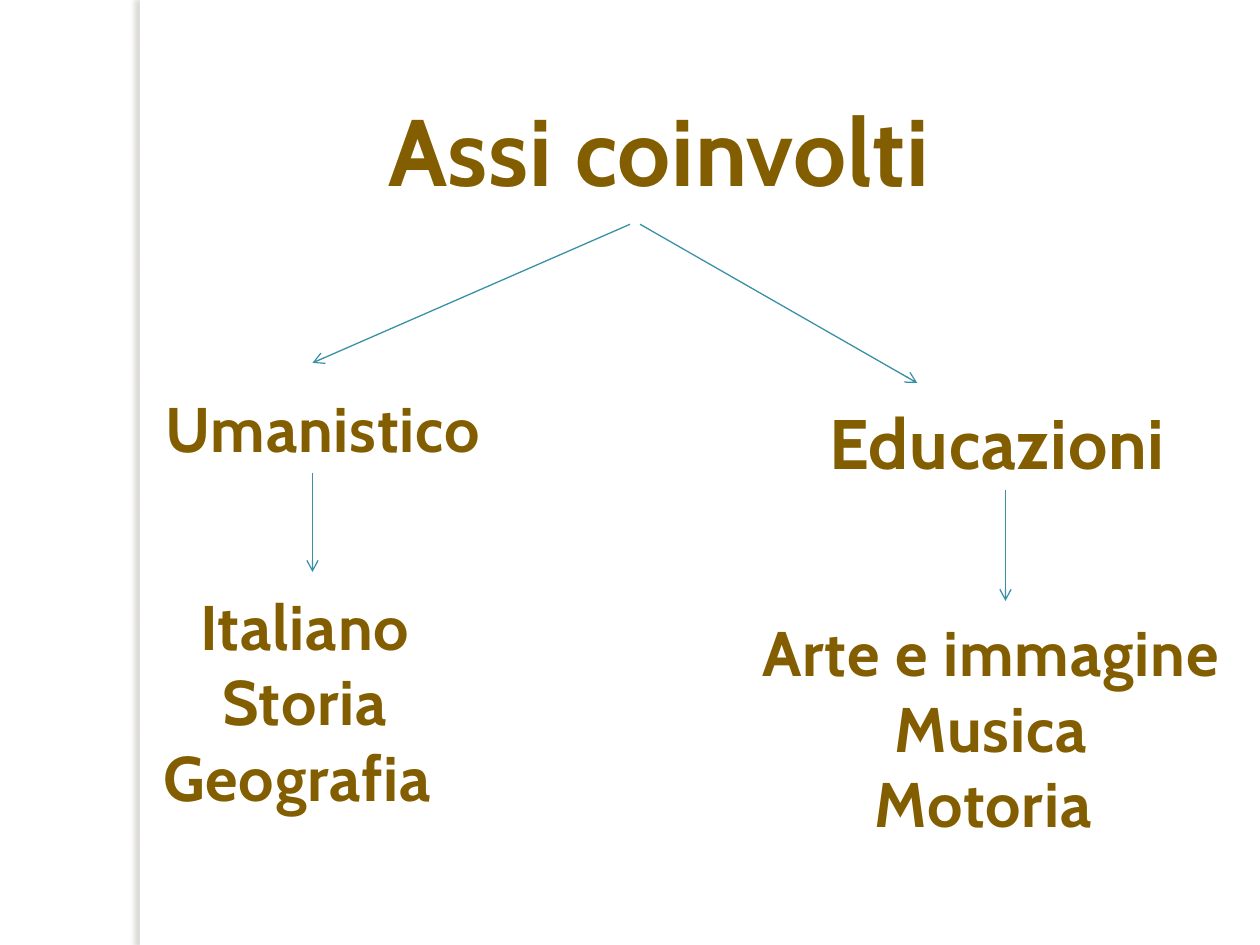
"""Build the slide showing the subject areas involved and their subjects."""
from lxml import etree
from pptx import Presentation
from pptx import util as u
from pptx.dml.color import RGBColor
from pptx.enum import shapes, text
from pptx.oxml.ns import qn

COLOURS = {"text": "835E01", "arrow": "3891A7", "strip": "FFFFFF", "shadow": "736F63"}
FONT = "Cabin"
TITLE = ("Assi coinvolti", 54, (2.76, 0.68, 4.94, 1.01))
LABELS = [
    ("Umanistico ", 36, (1.06, 3.04, 3.13, 0.71)),
    ("Educazioni ", 40, (6.34, 3.12, 3.28, 0.77)),
    ("Italiano\nStoria\nGeografia ", 36, (1.06, 4.61, 2.72, 1.92)),
    ("Arte e immagine\nMusica\nMotoria ", 36, (5.7, 4.82, 4.33, 1.92)),
]
ARROWS = [
    (5, 1.78, 2.48, 2.88),
    (5.08, 1.78, 7.28, 3.04),
    (2.48, 3.75, 2.48, 4.54),
    (7.98, 3.89, 7.98, 4.77),
]


def inches(values):
    return [u.Inches(value) for value in values]


def colour(name):
    return RGBColor.from_string(COLOURS[name])


def write(box, words, size):
    frame = box.text_frame
    frame.text = words
    frame.word_wrap = False
    frame.auto_size = text.MSO_AUTO_SIZE.SHAPE_TO_FIT_TEXT
    frame.vertical_anchor = text.MSO_ANCHOR.TOP
    for para in frame.paragraphs:
        para.alignment = text.PP_ALIGN.CENTER
        para.font.name = FONT
        para.font.size = u.Pt(size)
        para.font.bold = True
        para.font.color.rgb = colour("text")
        for span in para.runs:
            span._r.get_or_add_rPr().set("spc", "50")


def add_strip(page):
    strip = page.shapes.add_shape(
        shapes.MSO_SHAPE.RECTANGLE, *inches((1.11, 0, 0.08, 7.5)))
    strip.fill.solid()
    strip.fill.fore_color.rgb = colour("strip")
    strip.line.fill.background()
    strip.shadow.inherit = False
    effects = strip._element.spPr.find(qn("a:effectLst"))
    shadow = etree.SubElement(
        effects, qn("a:outerShdw"), blurRad=str(u.Pt(3)), dist=str(u.Pt(3)),
        dir="10800000", algn="ctr", rotWithShape="0")
    tint = etree.SubElement(shadow, qn("a:srgbClr"), val=COLOURS["shadow"])
    etree.SubElement(tint, qn("a:alpha"), val="25000")


def add_arrow(page, ends):
    arrow = page.shapes.add_connector(shapes.MSO_CONNECTOR.STRAIGHT, *inches(ends))
    arrow.line.color.rgb = colour("arrow")
    arrow.line.width = u.Pt(0.75)
    etree.SubElement(arrow.line._get_or_add_ln(), qn("a:tailEnd"), type="arrow")
    etree.SubElement(arrow._element.spPr, qn("a:effectLst"))


def main():
    deck = Presentation()
    deck.slide_width, deck.slide_height = inches((10, 7.5))
    page = deck.slides.add_slide(deck.slide_layouts[5])
    add_strip(page)
    title = page.shapes.title
    words, size, place = TITLE
    title.left, title.top, title.width, title.height = inches(place)
    write(title, words, size)
    for words, size, place in LABELS:
        write(page.shapes.add_textbox(*inches(place)), words, size)
    for ends in ARROWS:
        add_arrow(page, ends)
    deck.save("out.pptx")


if __name__ == "__main__":
    main()
